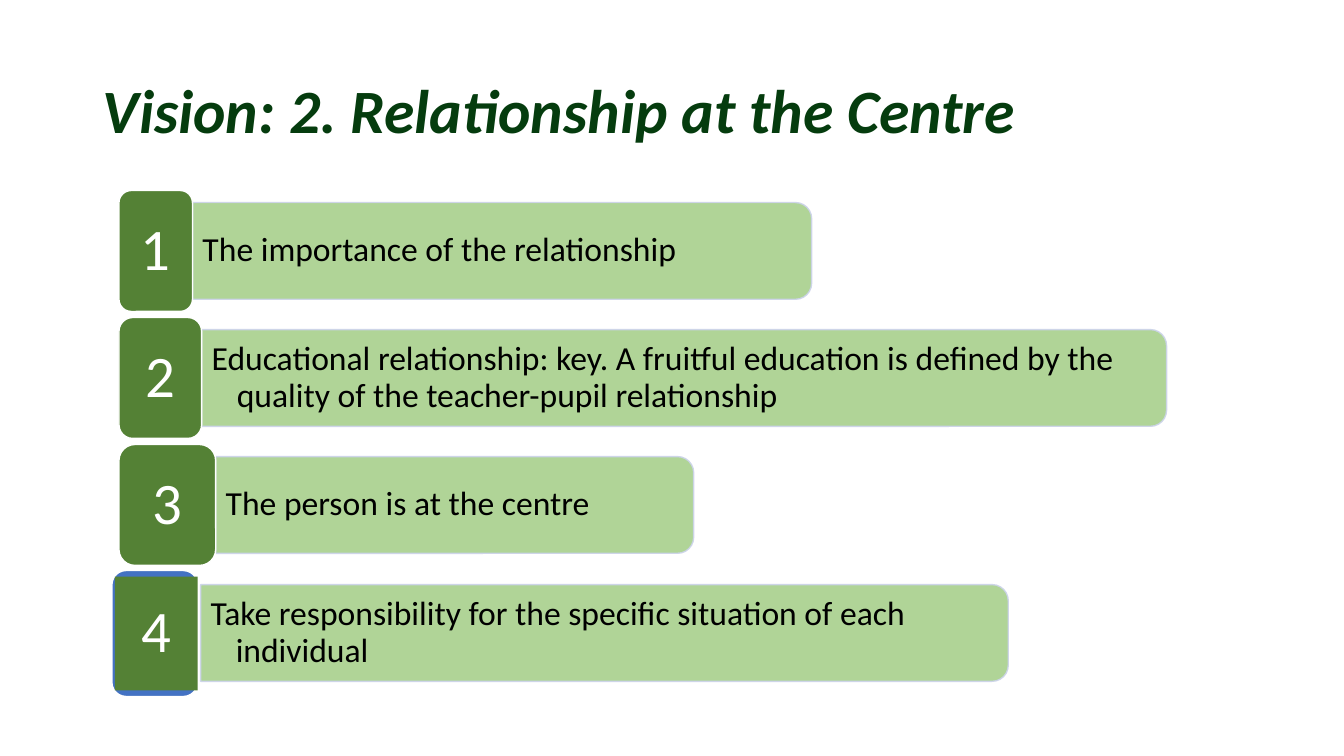
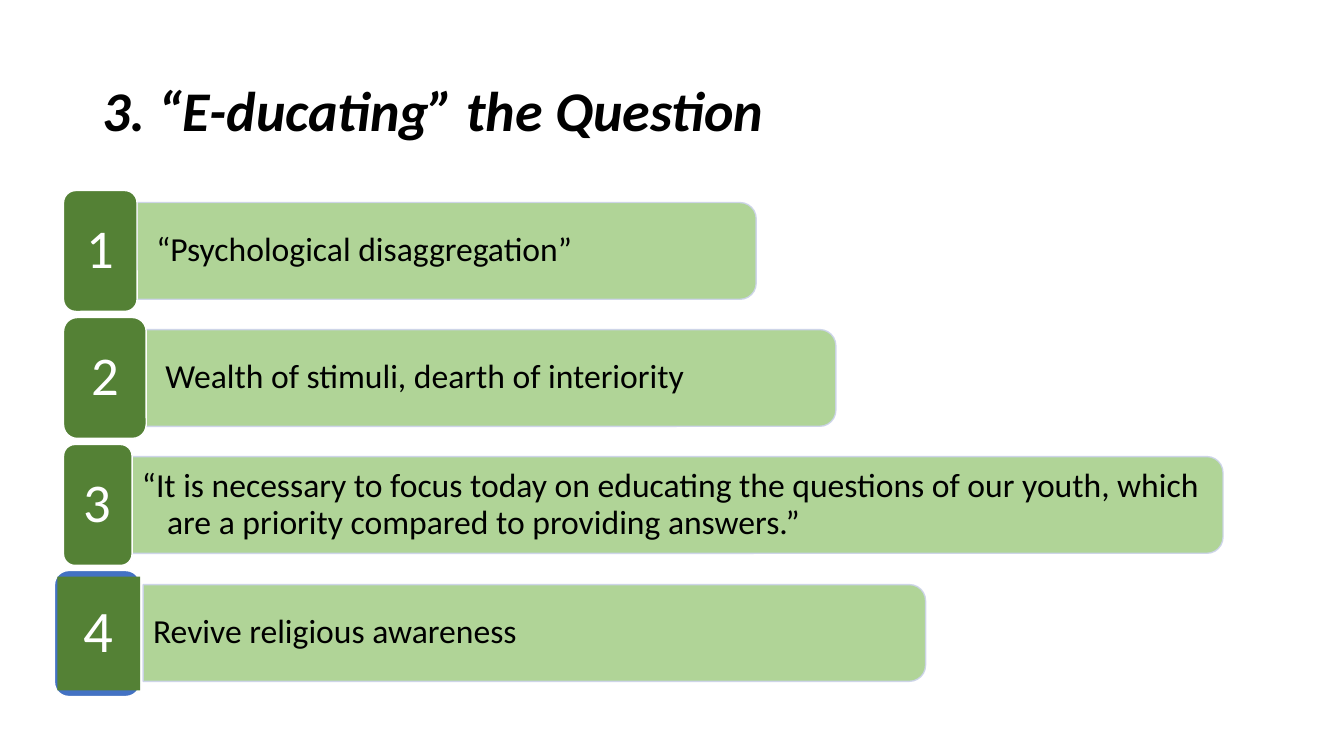
from pptx import Presentation
from pptx import util as u
from pptx.dml import color
from pptx.enum import shapes, text
from pptx.oxml import ns
from lxml import etree

PX = 9144  # 100 px to the inch
FONT = "Calibri"
COLORS = {
    "title_green": "053C0E",
    "black": "000000",
    "white": "FFFFFF",
    "bar": "A8D08C",
    "bar_line": "CCD3EA",
    "tile": "548135",
    "tile_back": "4372C3",
}
TITLE_BOX = (92, 40, 1150, 145)
ROW_TOP, ROW_PITCH = 189, 126
TILE_HEIGHT = 120
BAR_OFFSET, BAR_HEIGHT = 12, 96
BAR_PAD = 5

# Each row: tile width, bar width, text inset, text
SLIDES = [
    {
        "title": "Vision: 2. Relationship at the Centre",
        "title_size": 44, "title_color": "title_green",
        "left": 118, "last_left": 111, "number_size": 42,
        "rows": [
            (73, 614, 10, "The importance of the relationship"),
            (82, 957, 10, "Educational relationship: key. A fruitful education is defined "
                          "by the quality of the teacher-pupil relationship"),
            (96, 474, 10, "The person is at the centre"),
        ],
        "last_row": (801, "Take responsibility for the specific situation of each individual"),
    },
    {
        "title": "3. “E-ducating” the Question",
        "title_size": 40, "title_color": "black",
        "left": 63, "last_left": 54, "number_size": 39,
        "rows": [
            (73, 614, 19, "“Psychological disaggregation”"),
            (82, 684, 19, "Wealth of stimuli, dearth of interiority"),
            (68, 1082, 10, "“It is necessary to focus today on educating the questions of our "
                           "youth, which are a priority compared to providing answers.”"),
        ],
        "last_row": (776, "Revive religious awareness"),
    },
]


def emu(*lengths):
    return [u.Emu(round(length * PX)) for length in lengths]


def rgb(name):
    return color.RGBColor.from_string(COLORS[name])


def write(shape, words, size=24, color_name="black", bold=False, italic=False,
          align=text.PP_ALIGN.LEFT, inset=(10, 5), hanging=0, wrap=True):
    frame = shape.text_frame
    frame.word_wrap = wrap
    frame.vertical_anchor = text.MSO_ANCHOR.MIDDLE
    frame.margin_left, frame.margin_top = emu(*inset)
    frame.margin_right, frame.margin_bottom = emu(*inset)
    paragraph = frame.paragraphs[0]
    paragraph.alignment = align
    paragraph.line_spacing = 0.9
    if hanging:
        properties = paragraph._p.get_or_add_pPr()
        properties.set("marL", str(hanging * PX))
        properties.set("indent", str(-hanging * PX))
    run = paragraph.add_run()
    run.text = words
    run.font.name = FONT
    run.font.size = u.Pt(size)
    run.font.bold, run.font.italic = bold, italic
    run.font.color.rgb = rgb(color_name)


def add_text(slide, box, words, **style):
    write(slide.shapes.add_textbox(*emu(*box)), words, **style)


def add_block(slide, kind, box, fill, line=None):
    shape = slide.shapes.add_shape(kind, *emu(*box))
    shape.shadow.inherit = False
    shape.fill.solid()
    shape.fill.fore_color.rgb = rgb(fill)
    if line:
        shape.line.color.rgb = rgb(line)
        shape.line.width = u.Pt(1)
    else:
        shape.line.fill.background()
    return shape


def set_opacity(shape, percent):
    for solid in shape._element.spPr.iter(ns.qn("a:srgbClr")):
        etree.SubElement(solid, ns.qn("a:alpha")).set("val", str(percent * 1000))


def add_bar(slide, box, words, inset=10):
    """A bar rounded on its right side: a top-rounded shape turned by 90 degrees."""
    left, top, width, height = box
    shift = (width - height) / 2
    upright = (left + shift, top - shift, height, width)
    bar = add_block(slide, shapes.MSO_SHAPE.ROUND_2_SAME_RECTANGLE, upright, "bar", "bar_line")
    bar.rotation = 90
    set_opacity(bar, 90)
    add_text(slide, (left, top + BAR_PAD, width - BAR_PAD, height - 2 * BAR_PAD), words,
             inset=(inset, inset // 2), hanging=25)


def add_number(shape, number, size):
    write(shape, str(number), size=size, color_name="white",
          align=text.PP_ALIGN.CENTER, inset=(0, 0), wrap=False)


def add_row(slide, left, top, number, number_size, row):
    tile_width, bar_width, inset, words = row
    add_bar(slide, (left + tile_width, top + BAR_OFFSET, bar_width, BAR_HEIGHT), words, inset)
    tile = add_block(slide, shapes.MSO_SHAPE.ROUNDED_RECTANGLE,
                     (left, top, tile_width, TILE_HEIGHT), "tile", "white")
    add_number(tile, number, number_size)


def add_last_row(slide, left, top, number, row):
    """The final row: a square tile on a blue rounded backing."""
    bar_width, words = row
    back_width, back_height = 85, 125
    add_block(slide, shapes.MSO_SHAPE.ROUNDED_RECTANGLE,
              (left, top - 1, back_width, back_height), "tile_back", "white")
    tile = add_block(slide, shapes.MSO_SHAPE.RECTANGLE,
                     (left + 3, top + 5, back_width - 3, back_height - 12), "tile")
    add_number(tile, number, 42)
    add_bar(slide, (left + back_width + 3, top + BAR_OFFSET + 1, bar_width, BAR_HEIGHT), words)


def add_list_slide(presentation, content):
    slide = presentation.slides.add_slide(presentation.slide_layouts[6])
    add_text(slide, TITLE_BOX, content["title"], size=content["title_size"],
             color_name=content["title_color"], bold=True, italic=True)
    rows = content["rows"]
    for index, row in enumerate(rows):
        add_row(slide, content["left"], ROW_TOP + index * ROW_PITCH, index + 1,
                content["number_size"], row)
    add_last_row(slide, content["last_left"], ROW_TOP + len(rows) * ROW_PITCH,
                 len(rows) + 1, content["last_row"])


def main():
    presentation = Presentation()
    presentation.slide_width, presentation.slide_height = emu(1333, 750)
    for content in SLIDES:
        add_list_slide(presentation, content)
    presentation.save("out.pptx")


if __name__ == "__main__":
    main()
